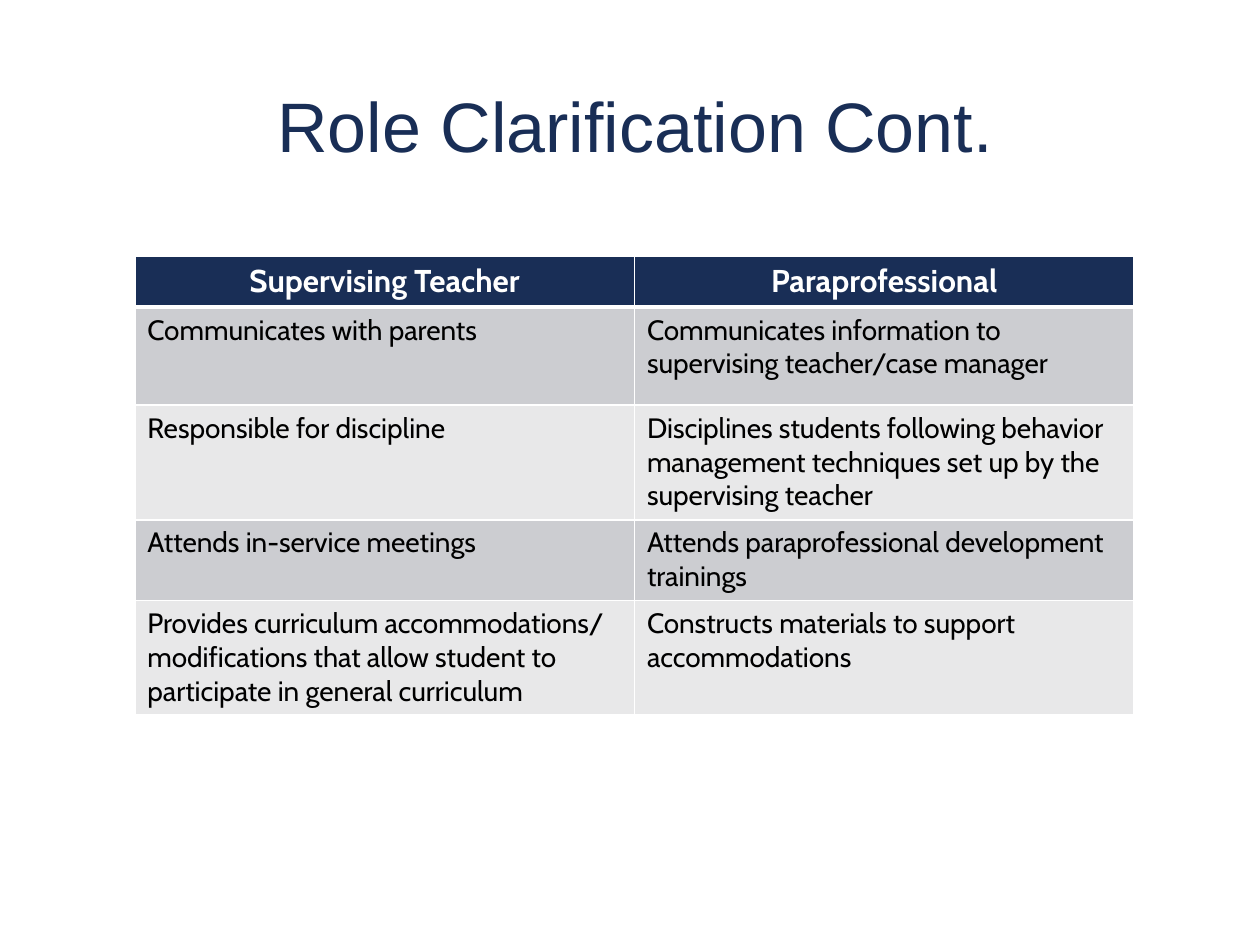
from lxml.etree import SubElement
from pptx import Presentation
from pptx.dml.color import RGBColor
from pptx.enum.text import MSO_ANCHOR, MSO_AUTO_SIZE, PP_ALIGN
from pptx.oxml.ns import qn
from pptx.util import Inches, Pt

NAVY, WHITE, BLACK = "192E56", "FFFFFF", "000000"
BANDS = ("CCCDD1", "E8E8E9")
ROW_HEIGHTS = (0.38, 0.78, 0.91, 0.64, 0.91)
ROLES = (
    ("Supervising Teacher", "Paraprofessional"),
    ("Communicates with parents",
     "Communicates information to supervising teacher/case manager"),
    ("Responsible for discipline",
     "Disciplines students following behavior management techniques "
     "set up by the supervising teacher"),
    ("Attends in-service meetings",
     "Attends paraprofessional development trainings"),
    ("Provides curriculum accommodations/\n"
     "modifications that allow student to participate in general curriculum",
     "Constructs materials to support accommodations"),
)
HEADER_FONT = {"name": "Cabin", "size": Pt(18), "bold": True}
BODY_FONT = {"name": "Cabin", "size": Pt(16), "bold": False}
TITLE_FONT = {"name": "Arial", "size": Pt(40), "bold": False}


def color(hex_string):
    return RGBColor.from_string(hex_string)


def apply(target, values):
    for key, value in values.items():
        setattr(target, key, value)


def format_text(frame, font, hex_string, layout):
    for paragraph in frame.paragraphs:
        apply(paragraph, layout)
        for run in paragraph.runs:
            apply(run.font, font)
            run.font.color.rgb = color(hex_string)


def add_borders(cell, widths):
    properties = cell._tc.get_or_add_tcPr()
    for side, width in widths.items():
        line = SubElement(properties, qn(f"a:ln{side}"), w=str(Pt(width)))
        fill = SubElement(line, qn("a:solidFill"))
        SubElement(fill, qn("a:srgbClr"), val=WHITE)


def place_title(slide, left, top, width, height):
    title = slide.shapes.title
    apply(title, {"left": left, "top": top, "width": width, "height": height})
    frame = title.text_frame
    frame.text = "Role Clarification Cont."
    apply(frame, {"word_wrap": True, "auto_size": MSO_AUTO_SIZE.NONE,
                  "vertical_anchor": MSO_ANCHOR.TOP, "margin_top": Inches(0.1)})
    format_text(frame, TITLE_FONT, NAVY,
                {"alignment": PP_ALIGN.CENTER, "line_spacing": 0.9, "space_before": Pt(0)})


def place_roles(slide, left, top, width, height):
    roles = slide.shapes.add_table(len(ROLES), 2, left, top, width, height).table
    for column in roles.columns:
        column.width = width // 2
    for row, (texts, row_height) in enumerate(zip(ROLES, ROW_HEIGHTS)):
        roles.rows[row].height = Inches(row_height)
        header = row == 0
        borders = {"L": 1, "R": 1, "T": 3 if row == 1 else 1, "B": 3 if header else 1}
        for column, text in enumerate(texts):
            cell = roles.cell(row, column)
            cell.text = text
            add_borders(cell, borders)
            cell.fill.solid()
            cell.fill.fore_color.rgb = color(NAVY if header else BANDS[(row - 1) % 2])
            format_text(cell.text_frame,
                        HEADER_FONT if header else BODY_FONT,
                        WHITE if header else BLACK,
                        {"alignment": PP_ALIGN.CENTER if header else PP_ALIGN.LEFT})


def main():
    deck = Presentation()
    apply(deck, {"slide_width": Inches(10), "slide_height": Inches(7.5)})
    slide = deck.slides.add_slide(deck.slide_layouts[5])
    place_title(slide, Inches(0.69), Inches(0.63), Inches(8.7), Inches(1.24))
    place_roles(slide, Inches(1.07), Inches(2.03), Inches(7.93), Inches(sum(ROW_HEIGHTS)))
    deck.save("out.pptx")


if __name__ == "__main__":
    main()
